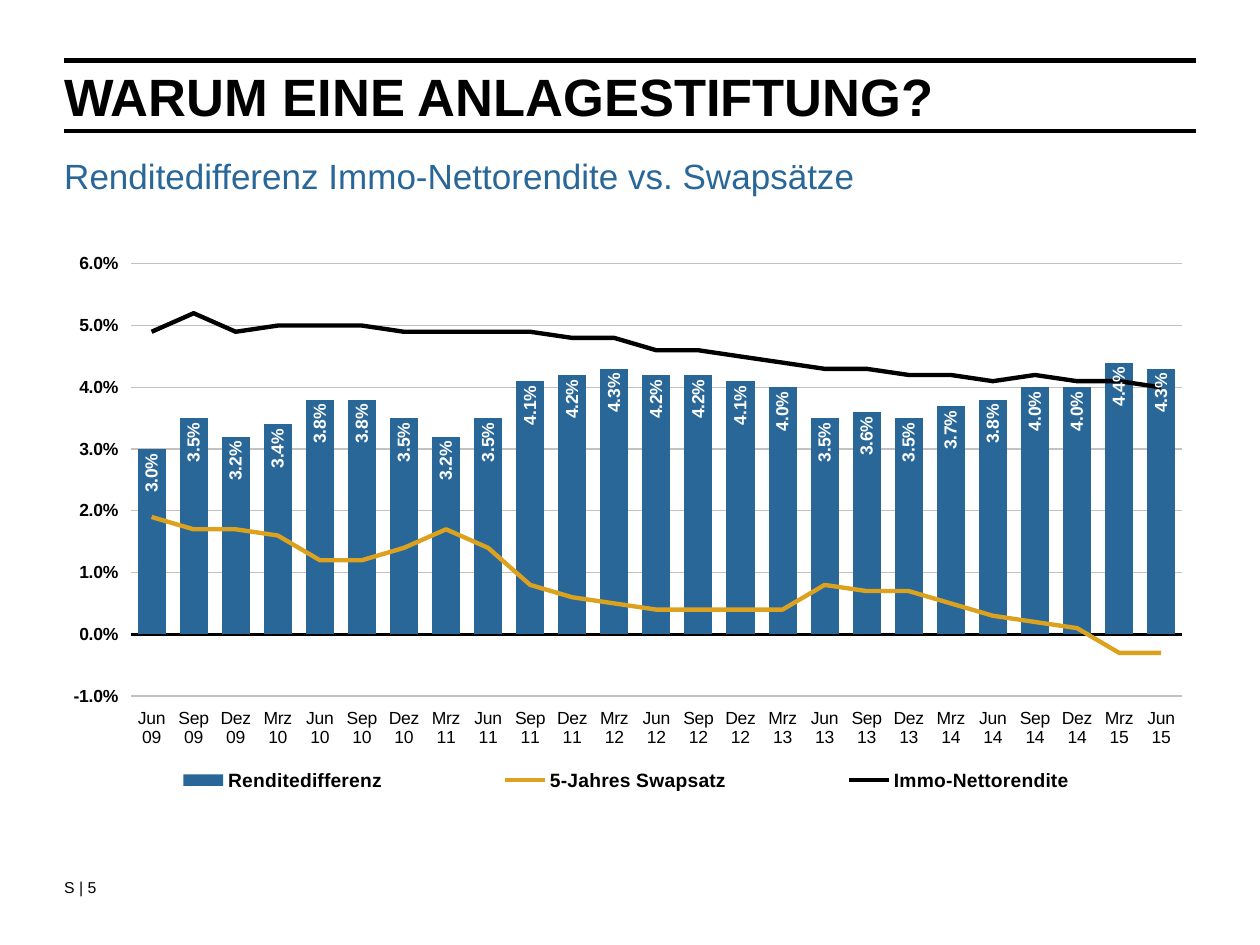
from lxml import etree
from pptx import Presentation
from pptx.chart.data import CategoryChartData
from pptx.dml.color import RGBColor
from pptx.enum.chart import (XL_CHART_TYPE, XL_LABEL_POSITION, XL_LEGEND_POSITION,
                             XL_TICK_LABEL_POSITION, XL_TICK_MARK)
from pptx.enum.shapes import MSO_CONNECTOR
from pptx.enum.text import MSO_ANCHOR, MSO_AUTO_SIZE, PP_ALIGN
from pptx.oxml.ns import qn
from pptx.util import Inches, Pt

FONT = "Arial"
BLACK = RGBColor(0x00, 0x00, 0x00)
WHITE = RGBColor(0xFF, 0xFF, 0xFF)
BLUE = RGBColor(0x29, 0x67, 0x99)
GOLD = RGBColor(0xDC, 0xA2, 0x1E)
GREY = RGBColor(0xC3, 0xC2, 0xBF)

LEFT, WIDTH = 0.51, 8.98
MONTHS = ["Mrz", "Jun", "Sep", "Dez"]
# Quarters from June 2009 to June 2015
QUARTERS = [f"{MONTHS[q % 4]} {9 + q // 4:02d}" for q in range(1, 26)]
# Values in percent
SPREAD = [3.0, 3.5, 3.2, 3.4, 3.8, 3.8, 3.5, 3.2, 3.5, 4.1, 4.2, 4.3, 4.2,
          4.2, 4.1, 4.0, 3.5, 3.6, 3.5, 3.7, 3.8, 4.0, 4.0, 4.4, 4.3]
SWAP = [1.9, 1.7, 1.7, 1.6, 1.2, 1.2, 1.4, 1.7, 1.4, 0.8, 0.6, 0.5, 0.4,
        0.4, 0.4, 0.4, 0.8, 0.7, 0.7, 0.5, 0.3, 0.2, 0.1, -0.3, -0.3]
NET_YIELD = [4.9, 5.2, 4.9, 5.0, 5.0, 5.0, 4.9, 4.9, 4.9, 4.9, 4.8, 4.8, 4.6,
             4.6, 4.5, 4.4, 4.3, 4.3, 4.2, 4.2, 4.1, 4.2, 4.1, 4.1, 4.0]
SERIES = {"Renditedifferenz": SPREAD, "5-Jahres Swapsatz": SWAP,
          "Immo-Nettorendite": NET_YIELD}


def place(shape, x, y, w, h):
    shape.left, shape.top = Inches(x), Inches(y)
    shape.width, shape.height = Inches(w), Inches(h)


def write(shape, text, size, color, bold=False, inset_top=0):
    """Fill a text shape with one left-aligned run and return its paragraph."""
    tf = shape.text_frame
    tf.word_wrap, tf.auto_size = True, MSO_AUTO_SIZE.NONE
    tf.vertical_anchor = MSO_ANCHOR.TOP
    tf.margin_left = tf.margin_right = tf.margin_bottom = 0
    tf.margin_top = Inches(inset_top)
    p = tf.paragraphs[0]
    p.alignment, p.space_before = PP_ALIGN.LEFT, Pt(0)
    r = p.add_run()
    r.text = text
    r.font.name, r.font.size, r.font.bold = FONT, Pt(size), bold
    r.font.color.rgb = color
    return p


def add_rule(s, x, y, w):
    line = s.shapes.add_connector(MSO_CONNECTOR.STRAIGHT, Inches(x), Inches(y),
                                  Inches(x + w), Inches(y))
    line.line.color.rgb, line.line.width = BLACK, Pt(2.8)
    etree.SubElement(line._element.spPr, qn("a:effectLst"))


def add_heading(s, x, y, w, h):
    """Title between two rules."""
    for rule_y in (y, y + h):
        add_rule(s, x, rule_y, w)
    title = s.shapes.title
    place(title, x, y + 0.08, w, 0.39)
    p = write(title, "WARUM EINE ANLAGESTIFTUNG?", 30, BLACK, True, 0.03)
    p.line_spacing = Pt(30)


def add_subtitle(s, x, y, w, h):
    body = s.placeholders[1]
    place(body, x, y, w, h)
    pPr = body.text_frame.paragraphs[0]._p.get_or_add_pPr()
    pPr.set("marL", "0")
    pPr.set("indent", "0")
    etree.SubElement(pPr, qn("a:buNone"))
    write(body, "Renditedifferenz Immo-Nettorendite vs. Swapsätze", 20, BLUE)


def add_page_number(s, x, y, w, h):
    sp = s.shapes.add_textbox(Inches(x), Inches(y), Inches(w), Inches(h))
    write(sp, "S | 5", 9, BLACK, inset_top=0.02).line_spacing = 1.06


def add_val(parent, tag, value):
    etree.SubElement(parent, qn(tag)).set("val", str(value))


def set_layout(parent, index, x, y, w, h, inner=False):
    """Fix the place of a chart part, in percent of the chart."""
    for old in parent.findall(qn("c:layout")):
        parent.remove(old)
    layout = etree.Element(qn("c:layout"))
    parent.insert(index, layout)
    manual = etree.SubElement(layout, qn("c:manualLayout"))
    if inner:
        add_val(manual, "c:layoutTarget", "inner")
    for tag in ("c:xMode", "c:yMode"):
        add_val(manual, tag, "edge")
    for tag, percent in zip(("c:x", "c:y", "c:w", "c:h"), (x, y, w, h)):
        add_val(manual, tag, round(percent / 100, 3))


def move_to_line_plot(chart, first):
    """Turn the column series from number first on into lines on the same axes."""
    bars = chart._chartSpace.find(".//" + qn("c:barChart"))
    lines = etree.Element(qn("c:lineChart"))
    add_val(lines, "c:grouping", "standard")
    add_val(lines, "c:varyColors", 0)
    for ser in bars.findall(qn("c:ser"))[first:]:
        for flag in ser.findall(qn("c:invertIfNegative")):
            ser.remove(flag)
        lines.append(ser)
        marker = etree.Element(qn("c:marker"))
        add_val(marker, "c:symbol", "none")
        ser.find(qn("c:tx")).addnext(marker)
    add_val(lines, "c:marker", 1)
    for axis in bars.findall(qn("c:axId")):
        add_val(lines, "c:axId", axis.get("val"))
    bars.addnext(lines)


def format_columns(plot):
    plot.gap_width, plot.vary_by_categories = 50, False
    fill = plot.series[0].format.fill
    fill.solid()
    fill.fore_color.rgb = BLUE
    labels = plot.series[0].data_labels
    labels.show_value, labels.position = True, XL_LABEL_POSITION.INSIDE_END
    labels.number_format, labels.number_format_is_linked = "0.0%", False
    labels.font.size, labels.font.bold, labels.font.name = Pt(10), True, FONT
    labels.font.color.rgb = WHITE
    body = labels._element.find(".//" + qn("a:bodyPr"))
    body.set("rot", "-5400000")
    body.set("vert", "horz")


def format_axes(chart):
    cat, val = chart.category_axis, chart.value_axis
    for axis in (cat, val):
        axis.tick_label_position = XL_TICK_LABEL_POSITION.LOW
    cat.major_tick_mark = XL_TICK_MARK.NONE
    cat.format.line.color.rgb, cat.format.line.width = BLACK, Pt(2)
    val.minimum_scale, val.maximum_scale, val.major_unit = -0.01, 0.06, 0.01
    val.major_tick_mark = XL_TICK_MARK.OUTSIDE
    val.format.line.fill.background()
    grid = val.major_gridlines.format.line
    grid.color.rgb, grid.width = GREY, Pt(0.75)
    val.tick_labels.number_format = "0.0%"
    val.tick_labels.number_format_is_linked = False
    val.tick_labels.font.bold = True


def add_yield_chart(s, x, y, w, h):
    data = CategoryChartData(number_format="0.0%")
    data.categories = QUARTERS
    for name, percents in SERIES.items():
        data.add_series(name, [round(v / 100, 3) for v in percents])
    chart = s.shapes.add_chart(XL_CHART_TYPE.COLUMN_CLUSTERED, Inches(x), Inches(y),
                               Inches(w), Inches(h), data).chart
    chart.has_title = False
    chart.font.name, chart.font.size, chart.font.color.rgb = FONT, Pt(10), BLACK
    move_to_line_plot(chart, 1)
    columns, lines = chart.plots
    format_columns(columns)
    for series, color in zip(lines.series, (GOLD, BLACK)):
        series.smooth = False
        series.format.line.color.rgb, series.format.line.width = color, Pt(2.5)
    format_axes(chart)
    chart.has_legend = True
    legend = chart.legend
    legend.position, legend.include_in_layout = XL_LEGEND_POSITION.BOTTOM, False
    legend.font.size, legend.font.bold = Pt(11), True
    set_layout(legend._element, 1, 0, 93.4, 100, 6)
    plot_area = chart._chartSpace.chart.plotArea
    set_layout(plot_area, 0, 5.7, 3.5, 94, 77.8, inner=True)


def main():
    prs = Presentation()
    prs.slide_width, prs.slide_height = Inches(10), Inches(7.5)
    s = prs.slides.add_slide(prs.slide_layouts[1])
    add_heading(s, LEFT, 0.48, WIDTH, 0.56)
    add_subtitle(s, LEFT, 1.23, WIDTH, 0.71)
    add_yield_chart(s, 0.53, 1.94, 8.88, 4.41)
    add_page_number(s, LEFT, 6.94, 0.75, 0.28)
    prs.save("out.pptx")


if __name__ == "__main__":
    main()
